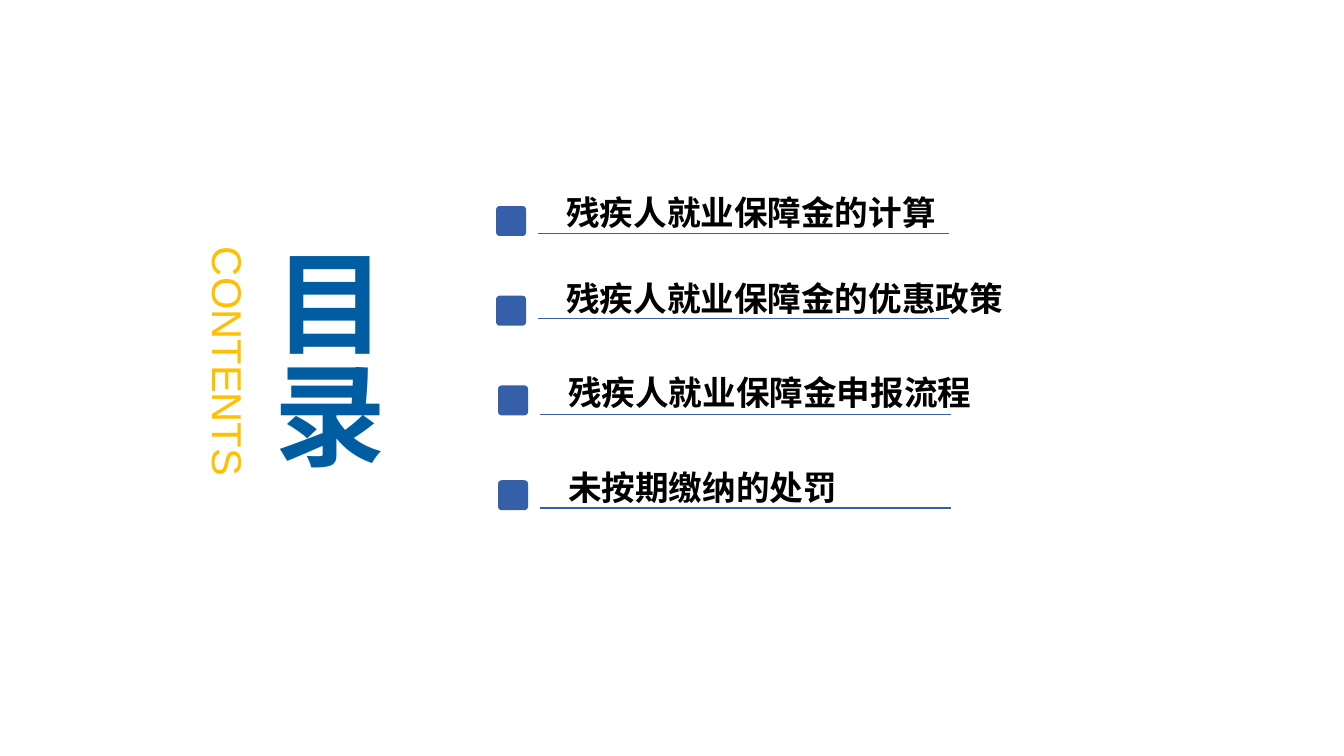
"""Build a contents slide with a vertical title and four underlined topics."""
from dataclasses import dataclass

from lxml.etree import SubElement
from pptx import Presentation
from pptx.dml.color import RGBColor
from pptx.enum.shapes import MSO_CONNECTOR, MSO_SHAPE
from pptx.enum.text import MSO_ANCHOR, MSO_AUTO_SIZE
from pptx.oxml.ns import qn
from pptx.shapes.autoshape import Shape
from pptx.slide import Slide
from pptx.util import Cm, Pt

BLUE = RGBColor(0x36, 0x5F, 0xAA)
NAVY = RGBColor(0x00, 0x5D, 0xA2)
GOLD = RGBColor(0xFF, 0xC0, 0x00)
BLACK = RGBColor(0x00, 0x00, 0x00)
FONT = "Arial"
MARK = 0.72
RULE = 10.36


@dataclass
class Label:
    text: str
    left: float
    top: float
    width: float
    height: float
    size: float
    color: RGBColor
    bold: bool = True
    inset: bool = False


@dataclass
class Topic:
    text: str
    left: float
    mark_top: float
    rule_top: float
    text_top: float
    width: float


TITLE = Label("目录", 6.53, 6.22, 3.4, 6.02, 79.9, NAVY)
SIDE = Label("CONTENTS", 2.79, 8.56, 5.94, 1.27, 29.8, GOLD, bold=False)
TOPICS = [
    Topic("残疾人就业保障金的计算", 12.52, 5.21, 5.89, 4.7, 10.13),
    Topic("残疾人就业保障金的优惠政策", 12.52, 7.47, 8.03, 6.88, 11.81),
    Topic("残疾人就业保障金申报流程", 12.57, 9.73, 10.44, 9.25, 11.76),
    Topic("未按期缴纳的处罚", 12.57, 12.12, 12.8, 11.63, 11.76),
]


def add_label(slide: Slide, label: Label) -> Shape:
    box = slide.shapes.add_textbox(
        Cm(label.left), Cm(label.top), Cm(label.width), Cm(label.height))
    frame = box.text_frame
    frame.word_wrap = True
    frame.auto_size = MSO_AUTO_SIZE.SHAPE_TO_FIT_TEXT
    if not label.inset:
        frame.margin_left = frame.margin_right = Cm(0)
        frame.margin_top = frame.margin_bottom = Cm(0)
    para = frame.paragraphs[0]
    para.text = label.text
    para.font.name = FONT
    para.font.size = Pt(label.size)
    para.font.bold = label.bold
    para.font.color.rgb = label.color
    return box


def add_mark(slide: Slide, left: float, top: float) -> None:
    mark = slide.shapes.add_shape(
        MSO_SHAPE.ROUNDED_RECTANGLE, Cm(left), Cm(top), Cm(MARK), Cm(MARK))
    mark.adjustments[0] = 0.1
    mark.shadow.inherit = False
    mark.fill.solid()
    mark.fill.fore_color.rgb = BLUE
    mark.line.color.rgb = BLUE
    mark.line.width = Pt(1)


def add_rule(slide: Slide, left: float, top: float) -> None:
    rule = slide.shapes.add_connector(
        MSO_CONNECTOR.STRAIGHT, Cm(left), Cm(top), Cm(left + RULE), Cm(top))
    rule.line.color.rgb = BLUE
    rule.line.width = Pt(1)
    SubElement(rule.element.spPr, qn("a:effectLst"))


def add_topic(slide: Slide, topic: Topic) -> None:
    add_mark(slide, topic.left, topic.mark_top)
    add_rule(slide, topic.left + 1.04, topic.rule_top)
    add_label(slide, Label(topic.text, topic.left + 1.5, topic.text_top,
                           topic.width, 1.27, 24, BLACK, inset=True))


def main() -> None:
    deck = Presentation()
    deck.slide_width, deck.slide_height = Cm(33.87), Cm(19.05)
    slide = deck.slides.add_slide(deck.slide_layouts[6])
    title = add_label(slide, TITLE)
    title.text_frame.vertical_anchor = MSO_ANCHOR.MIDDLE
    title.element.txBody.bodyPr.set("vert", "eaVert")
    add_label(slide, SIDE).rotation = 90
    for topic in TOPICS:
        add_topic(slide, topic)
    deck.save("out.pptx")


if __name__ == "__main__":
    main()
